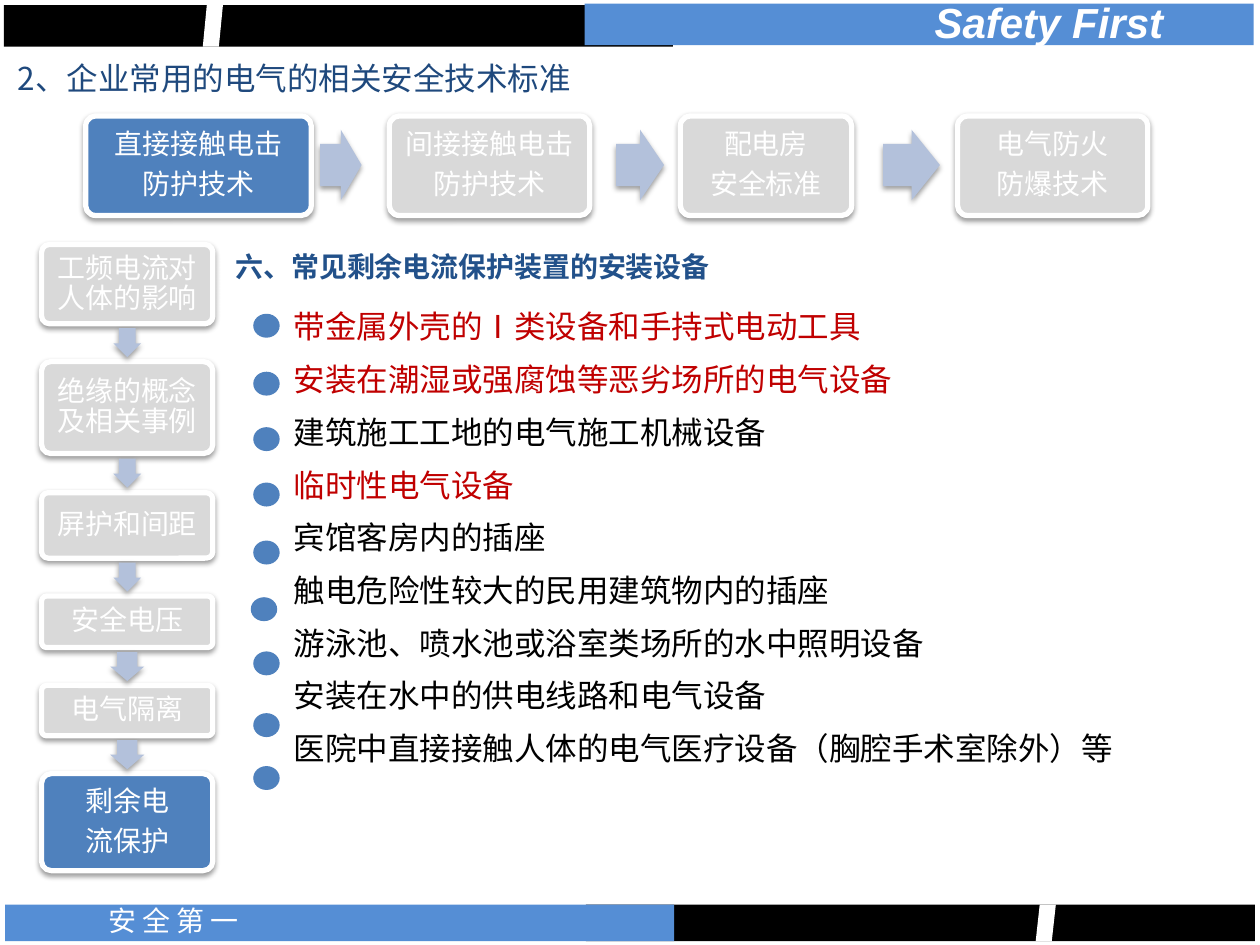
from lxml import etree
from pptx import Presentation
from pptx.dml.color import RGBColor
from pptx.enum import shapes, text
from pptx.oxml import ns
from pptx.util import Inches, Pt

BLACK = RGBColor(0, 0, 0)
WHITE = RGBColor(255, 255, 255)
BAND_BLUE = RGBColor(0x55, 0x8E, 0xD5)
ACTIVE_BLUE = RGBColor(0x4F, 0x81, 0xBD)
IDLE_GREY = RGBColor(0xD9, 0xD9, 0xD9)
ARROW_BLUE = RGBColor(0xB3, 0xC1, 0xDB)
TITLE_BLUE = RGBColor(0x1F, 0x49, 0x7D)
HEADING_BLUE = RGBColor(0x22, 0x51, 0x8A)
RED = RGBColor(0xC0, 0, 0)
CHINESE_FONT = "Noto Sans CJK SC"

RECTANGLE = shapes.MSO_SHAPE.RECTANGLE
SLANT = shapes.MSO_SHAPE.FLOWCHART_DATA
BANDS = [
    (RECTANGLE, 0.03, 0.04, 5.31, 0.33, BLACK),
    (RECTANGLE, 4.64, 0.03, 5.31, 0.33, BAND_BLUE),
    (SLANT, 1.61, 0.04, 0.16, 0.33, WHITE),
    (RECTANGLE, 4.65, 7.18, 5.31, 0.29, BLACK),
    (RECTANGLE, 0.04, 7.18, 5.31, 0.29, BAND_BLUE),
    (SLANT, 8.22, 7.18, 0.16, 0.29, WHITE),
]
TITLE = "2、企业常用的电气的相关安全技术标准"
HEADING = "六、常见剩余电流保护装置的安装设备"
TOPICS = [
    ("直接接触电击\n防护技术", 0.68, 1.79, True),
    ("间接接触电击\n防护技术", 3.09, 1.59, False),
    ("配电房\n安全标准", 5.4, 1.36, False),
    ("电气防火\n防爆技术", 7.6, 1.51, False),
]
TOPIC_ARROWS = [(2.54, 0.33), (4.89, 0.38), (7.01, 0.45)]
STEPS = [
    ("工频电流对人体的影响", 1.94, 0.63, False),
    ("绝缘的概念及相关事例", 2.87, 0.73, False),
    ("屏护和间距", 3.91, 0.52, False),
    ("安全电压", 4.73, 0.41, False),
    ("电气隔离", 5.44, 0.4, False),
    ("剩余电\n流保护", 6.14, 0.77, True),
]
STEP_LEFT, STEP_WIDTH = 0.33, 1.36
STEP_ARROW_LENGTHS = [0.23, 0.23, 0.23, 0.23, 0.23]
STEP_ARROW_BREADTHS = [0.22, 0.22, 0.22, 0.27, 0.27]
DEVICES = [
    ("带金属外壳的Ⅰ类设备和手持式电动工具", RED, 2.01, 2.49),
    ("安装在潮湿或强腐蚀等恶劣场所的电气设备", RED, 2.01, 2.95),
    ("建筑施工工地的电气施工机械设备", BLACK, 2.01, 3.39),
    ("临时性电气设备", RED, 2.01, 3.83),
    ("宾馆客房内的插座", BLACK, 2.01, 4.29),
    ("触电危险性较大的民用建筑物内的插座", BLACK, 1.99, 4.74),
    ("游泳池、喷水池或浴室类场所的水中照明设备", BLACK, 2.01, 5.17),
    ("安装在水中的供电线路和电气设备", BLACK, 2.01, 5.66),
    ("医院中直接接触人体的电气医疗设备（胸腔手术室除外）等", BLACK, 2.01, 6.08),
]


def add_shadow(shape):
    effects = shape._element.spPr.find(ns.qn("a:effectLst"))
    shadow = etree.SubElement(
        effects, ns.qn("a:outerShdw"), blurRad=str(Pt(3.1)), dist=str(Pt(1.6)),
        dir="5400000", rotWithShape="0")
    color = etree.SubElement(shadow, ns.qn("a:srgbClr"), val="000000")
    etree.SubElement(color, ns.qn("a:alpha"), val="38000")


def add_shape(slide, kind, left, top, width, height, fill):
    shape = slide.shapes.add_shape(
        kind, Inches(left), Inches(top), Inches(width), Inches(height))
    shape.shadow.inherit = False
    shape.fill.solid()
    shape.fill.fore_color.rgb = fill
    shape.line.fill.background()
    return shape


def format_paragraph(paragraph, size, color, font=CHINESE_FONT, bold=False,
                     italic=False, align=text.PP_ALIGN.LEFT, spacing=1.0):
    paragraph.alignment = align
    paragraph.line_spacing = spacing
    for run in paragraph.runs:
        run.font.size = Pt(size)
        run.font.bold = bold
        run.font.italic = italic
        run.font.color.rgb = color
        run.font.name = font
        etree.SubElement(run.font._element, ns.qn("a:ea"), typeface=font)


def add_label(slide, words, left, top, width, height, wrap, **style):
    box = slide.shapes.add_textbox(
        Inches(left), Inches(top), Inches(width), Inches(height))
    box.text_frame.word_wrap = wrap
    box.text_frame.text = words
    format_paragraph(box.text_frame.paragraphs[0], **style)


def add_card(slide, words, left, top, width, height, active):
    card = add_shape(slide, shapes.MSO_SHAPE.ROUNDED_RECTANGLE, left, top,
                     width, height, ACTIVE_BLUE if active else IDLE_GREY)
    card.adjustments[0] = 0.1
    card.line.color.rgb = WHITE
    card.line.width = Pt(3)
    add_shadow(card)
    frame = card.text_frame
    frame.word_wrap = True
    frame.vertical_anchor = text.MSO_ANCHOR.MIDDLE
    frame.margin_left = frame.margin_right = Inches(0.09)
    frame.margin_top = frame.margin_bottom = Inches(0.09)
    frame.text = words
    for paragraph in frame.paragraphs:
        format_paragraph(paragraph, 16, WHITE, align=text.PP_ALIGN.CENTER, spacing=0.9)
        paragraph.space_after = Pt(5.6)


def add_arrow(slide, left, top, width, height, rotation=0):
    arrow = add_shape(slide, shapes.MSO_SHAPE.RIGHT_ARROW, left, top, width, height, ARROW_BLUE)
    arrow.adjustments[0] = 0.6
    arrow.adjustments[1] = 0.5
    arrow.rotation = rotation
    add_shadow(arrow)


def place_placeholder(shape, left, top, width, height):
    shape.left, shape.top = Inches(left), Inches(top)
    shape.width, shape.height = Inches(width), Inches(height)
    frame = shape.text_frame
    frame.word_wrap = True
    frame.auto_size = text.MSO_AUTO_SIZE.NONE
    frame.vertical_anchor = text.MSO_ANCHOR.TOP
    return frame


def add_device_list(slide):
    frame = place_placeholder(slide.placeholders[1], 2.23, 2.39, 6.93, 4.04)
    frame.text = "\n".join(device[0] for device in DEVICES)
    for index, (paragraph, device) in enumerate(zip(frame.paragraphs, DEVICES)):
        _, color, left, top = device
        format_paragraph(paragraph, 18, color)
        paragraph.space_before = Pt(8.5 if index else 0)
        properties = paragraph._p.get_or_add_pPr()
        properties.set("marL", "0")
        properties.set("indent", "0")
        etree.SubElement(properties, ns.qn("a:buNone"))
        add_shape(slide, shapes.MSO_SHAPE.OVAL, left, top, 0.21, 0.19, ACTIVE_BLUE)


def main():
    presentation = Presentation()
    presentation.slide_width, presentation.slide_height = Inches(10), Inches(7.5)
    slide = presentation.slides.add_slide(presentation.slide_layouts[1])

    for band in BANDS:
        add_shape(slide, *band)
    add_label(slide, "Safety First", 6.24, -0.08, 3.09, 0.51, True, size=24, color=WHITE,
              font="Arial", bold=True, italic=True, align=text.PP_ALIGN.RIGHT)
    add_label(slide, "安 全 第 一", 0.76, 7.12, 1.32, 0.37, False, size=16, color=WHITE)

    title = place_placeholder(slide.shapes.title, 0.04, 0.45, 6.69, 0.38)
    title.text = TITLE
    format_paragraph(title.paragraphs[0], 18, TITLE_BLUE, spacing=0.9)

    for words, left, width, active in TOPICS:
        add_card(slide, words, left, 0.92, width, 0.79, active)
    for left, width in TOPIC_ARROWS:
        add_arrow(slide, left, 1.03, width, 0.56)

    for words, top, height, active in STEPS:
        add_card(slide, words, STEP_LEFT, top, STEP_WIDTH, height, active)
    center = STEP_LEFT + STEP_WIDTH / 2
    for above, below, length, breadth in zip(
            STEPS, STEPS[1:], STEP_ARROW_LENGTHS, STEP_ARROW_BREADTHS):
        middle = (above[1] + above[2] + below[1]) / 2
        add_arrow(slide, center - length / 2, middle - breadth / 2, length, breadth, 90)

    add_label(slide, HEADING, 1.77, 1.8, 4.02, 0.5, False, size=16,
              color=HEADING_BLUE, bold=True, spacing=1.5)
    add_device_list(slide)
    presentation.save("out.pptx")


if __name__ == "__main__":
    main()
